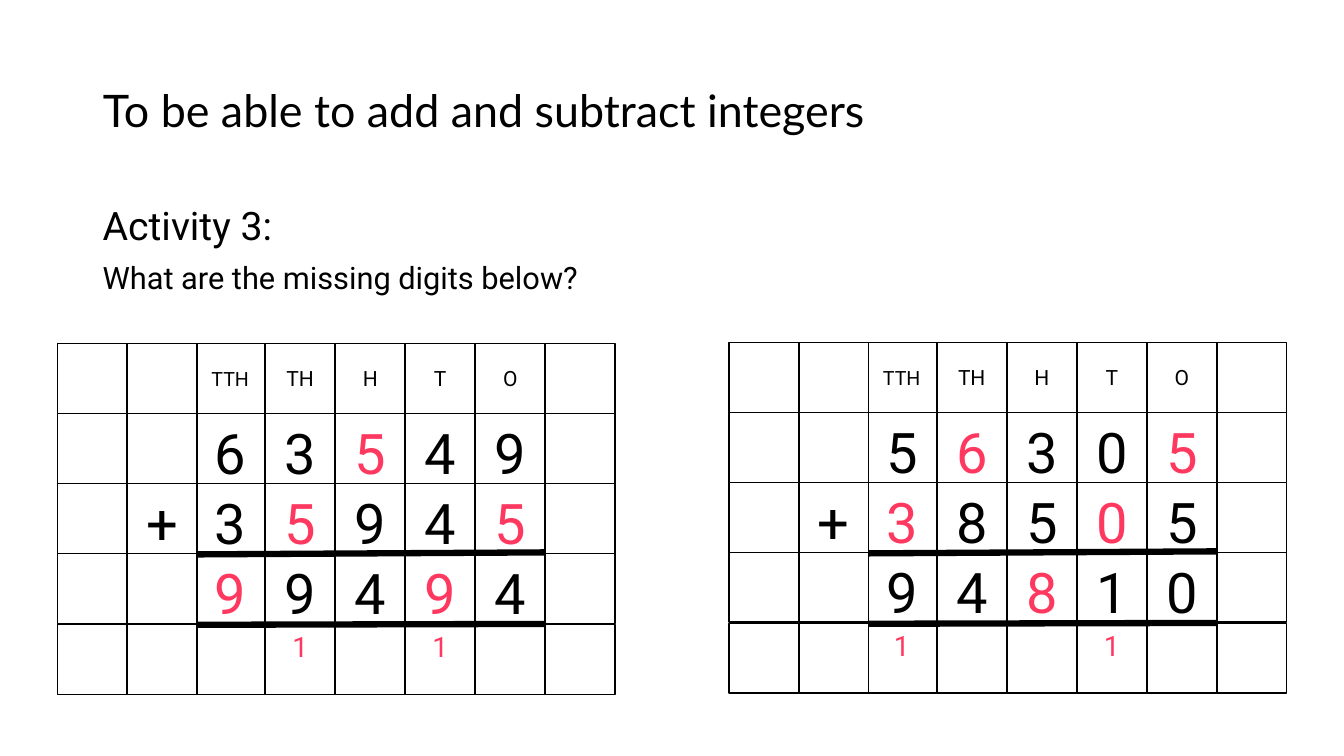
from lxml import etree
from pptx import Presentation
from pptx.dml.color import RGBColor
from pptx.enum.shapes import MSO_CONNECTOR, MSO_SHAPE
from pptx.enum.text import MSO_ANCHOR, PP_ALIGN
from pptx.oxml.ns import qn
from pptx.util import Inches, Pt

RECT, STRAIGHT = MSO_SHAPE.RECTANGLE, MSO_CONNECTOR.STRAIGHT
TOP, MIDDLE = MSO_ANCHOR.TOP, MSO_ANCHOR.MIDDLE
LEFT, CENTER = PP_ALIGN.LEFT, PP_ALIGN.CENTER
BLACK = RGBColor(0x00, 0x00, 0x00)
WHITE = RGBColor(0xFF, 0xFF, 0xFF)
PINK = RGBColor(0xFF, 0x38, 0x60)

# Content
TITLE = "To be able to add and subtract integers"
BODY = [("Activity 3:", 28, 0), ("What are the missing digits below?", 22, 10)]
PLACES = ["", "", "TTH", "TH", "H", "T", "O", ""]
# Each sum: left, top, then rows of (cells, columns shown in pink)
SUMS = [
    (7.23, 3.40, [
        (["", "", "5", "6", "3", "0", "5", ""], {3, 6}),
        (["", "+", "3", "8", "5", "0", "5", ""], {2, 5}),
        (["", "", "9", "4", "8", "1", "0", ""], {4}),
        (["", "", "1", "", "", "1", "", ""], {2, 5}),
    ]),
    (0.57, 3.41, [
        (["", "", "6", "3", "5", "4", "9", ""], {4}),
        (["", "+", "3", "5", "9", "4", "5", ""], {3, 6}),
        (["", "", "9", "9", "4", "9", "4", ""], {2, 5}),
        (["", "", "", "1", "", "1", "", ""], {3, 5}),
    ]),
]

# Grid
CELL = 0.69
STEP = 4.86 / 7
PLACE_SHIFT = -0.02   # place-value columns sit slightly left
CARRY_SHIFT = 0.01    # carry row sits slightly lower
HEADER, CARRY = 0, 4
# Rules: start x, start y, end x, end y from the grid corner
RULES = [(0.70, 2.79, 4.84, 2.78), (1.36, 2.09, 4.84, 2.07)]


def write(p, text, size, color=BLACK, name="Roboto", **paragraph):
    for key, value in paragraph.items():
        setattr(p, key, value)
    r = p.add_run()
    r.text = text
    for key, value in {"size": Pt(size), "name": name}.items():
        setattr(r.font, key, value)
    r.font.color.rgb = color


def add_cell(s, x, y, text, size, color, anchor):
    sp = s.shapes.add_shape(RECT, Inches(x), Inches(y), Inches(CELL), Inches(CELL))
    sp.shadow.inherit = False
    sp.fill.solid()
    sp.fill.fore_color.rgb = WHITE
    sp.line.color.rgb = BLACK
    sp.line.width = Pt(1)
    if text:
        sp.text_frame.vertical_anchor = anchor
        write(sp.text_frame.paragraphs[0], text, size, color, alignment=CENTER)


def add_column(s, left, top, rows, col):
    x = left + col * STEP + (PLACE_SHIFT if col > 1 else 0)
    for row, (cells, pink) in enumerate([(PLACES, set())] + rows):
        y = top + row * STEP + (CARRY_SHIFT if row == CARRY else 0)
        text = cells[col]
        size = {HEADER: 14 if text == "TTH" else 15, CARRY: 20}.get(row, 40)
        add_cell(s, x, y, text, size, PINK if col in pink else BLACK,
                 MIDDLE if row == HEADER else TOP)


def add_rule(s, left, top, x1, y1, x2, y2):
    line = s.shapes.add_connector(STRAIGHT, Inches(left + x1), Inches(top + y1),
                                  Inches(left + x2), Inches(top + y2))
    line.line.color.rgb = BLACK
    line.line.width = Pt(4.5)
    etree.SubElement(line._element.spPr, qn("a:effectLst"))


def main():
    prs = Presentation()
    prs.slide_width, prs.slide_height = Inches(13.33), Inches(7.5)
    s = prs.slides.add_slide(prs.slide_layouts[5])

    # Title
    title = s.shapes.title
    title.left, title.top = Inches(0.92), Inches(0.4)
    title.width, title.height = Inches(9.6), Inches(1.45)
    title.text_frame.vertical_anchor = MIDDLE
    write(title.text_frame.paragraphs[0], TITLE, 32, name="Lato",
          alignment=LEFT, line_spacing=0.9)

    # Activity text
    tf = s.shapes.add_textbox(Inches(0.92), Inches(2), Inches(11.5),
                              Inches(4.76)).text_frame
    tf.word_wrap = True
    for i, (text, size, before) in enumerate(BODY):
        p = tf.add_paragraph() if i else tf.paragraphs[0]
        write(p, text, size, line_spacing=0.9, space_before=Pt(before))

    # Sums: place-value columns, rules, then the two left columns on top
    for left, top, rows in SUMS:
        for col in range(2, len(PLACES)):
            add_column(s, left, top, rows, col)
        for rule in RULES:
            add_rule(s, left, top, *rule)
        for col in range(2):
            add_column(s, left, top, rows, col)

    prs.save("out.pptx")


if __name__ == "__main__":
    main()
